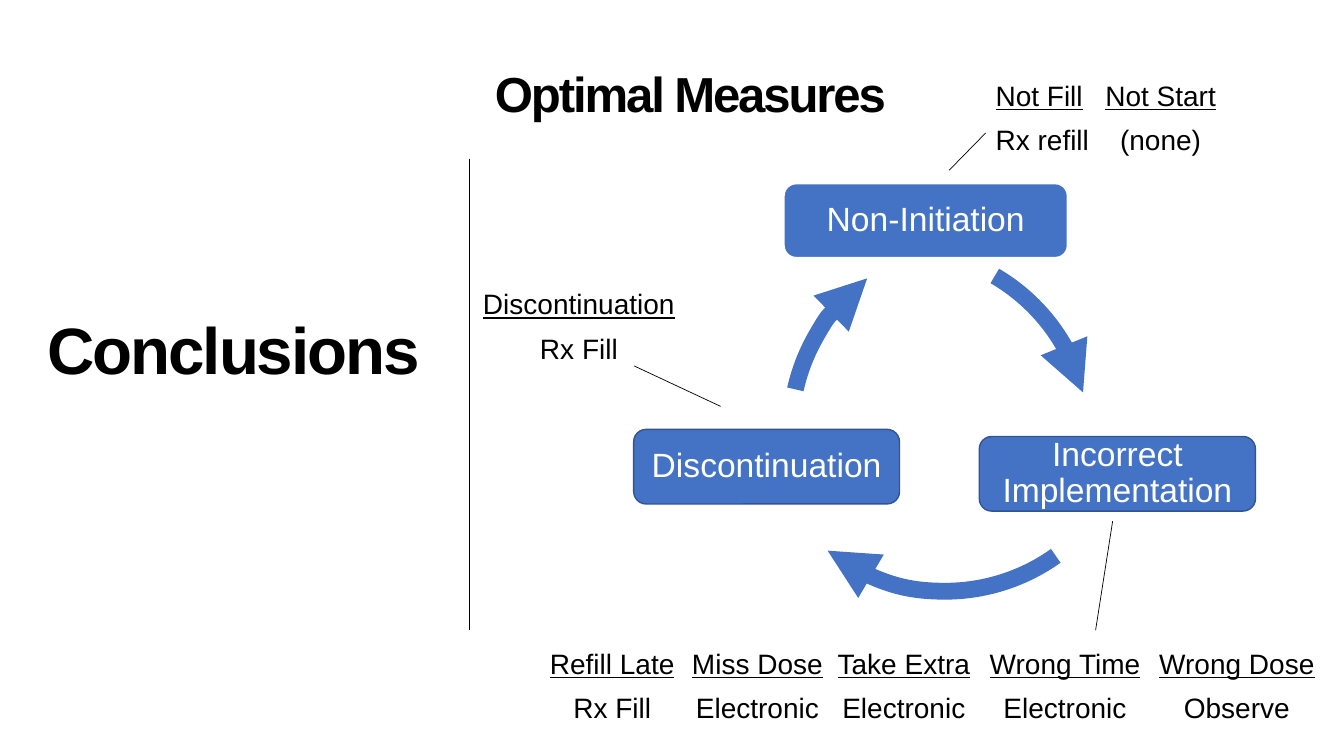
"""Build the conclusions slide: a cycle of three adherence phases and their best measures."""
from lxml import etree
from pptx import Presentation
from pptx.dml import color as dml
from pptx.enum import shapes, text
from pptx.oxml import ns
from pptx.util import Cm, Pt

COLORS = {"ink": "000000", "blue": "4472C4", "edge": "325491", "white": "FFFFFF"}
FONT = "Arial"

TITLE = ("Conclusions", (0.87, 7.06, 9.96, 3.68), 46.8)
HEADING = ("Optimal Measures", (11.28, 0.6, 11.3, 3.68), 35.1)

PHASES = [
    ("Non-Initiation", (19.75, 4.62, 7.16, 1.88), "white", 1.5),
    ("Incorrect Implementation", (24.68, 11.0, 6.96, 1.88), "edge", 1),
    ("Discontinuation", (15.97, 10.82, 6.7, 1.88), "edge", 1),
]
ARC_DIAMETER = 9.6
ARCS = [
    ((22.65, 11.1), 300.3, 345.4),
    ((23.82, 10.1), 54.5, 128.1),
    ((24.73, 10.86), 192.6, 233.2),
]

LEFT, CENTER = text.PP_ALIGN.LEFT, text.PP_ALIGN.CENTER
MEASURE_GROUPS = [
    (1.95, [
        ("Not Fill", "Rx refill", 26.34, 2.5, LEFT),
        ("Not Start", "(none)", 29.25, 3.1, CENTER),
    ]),
    (7.2, [("Discontinuation", "Rx Fill", 14.59, 5.1, CENTER)]),
    (16.26, [
        ("Refill Late", "Rx Fill", 15.43, 3.6, CENTER),
        ("Miss Dose", "Electronic", 19.09, 3.6, CENTER),
        ("Take Extra", "Electronic", 22.78, 3.6, CENTER),
        ("Wrong Time", "Electronic", 26.84, 4.1, CENTER),
        ("Wrong Dose", "Observe", 31.17, 4.1, CENTER),
    ]),
]
MEASURE_HEIGHT = 2.2

RULES = [
    ((11.84, 4.0), (11.84, 15.88)),
    ((15.98, 9.22), (18.16, 10.24)),
    ((23.92, 4.29), (24.84, 3.35)),
    ((27.61, 15.88), (28.04, 13.13)),
]


def rgb(name):
    return dml.RGBColor.from_string(COLORS[name])


def style_run(run, size, color="ink"):
    run.font.name, run.font.size = FONT, Pt(size)
    run.font.color.rgb = rgb(color)


def fill_heading(shape, wording, box, size):
    shape.left, shape.top, shape.width, shape.height = map(Cm, box)
    frame = shape.text_frame
    frame.text = wording
    frame.word_wrap = True
    frame.auto_size = text.MSO_AUTO_SIZE.NONE
    frame.vertical_anchor = text.MSO_ANCHOR.MIDDLE
    paragraph = frame.paragraphs[0]
    paragraph.alignment = text.PP_ALIGN.RIGHT
    paragraph.line_spacing, paragraph.space_before = 0.9, Pt(0)
    properties = paragraph._p.get_or_add_pPr()
    properties.set("marL", "0")
    properties.set("indent", "0")
    etree.SubElement(properties, ns.qn("a:buNone"))
    run = paragraph.runs[0]
    style_run(run, size)
    run.font.bold = True
    run._r.get_or_add_rPr().set("spc", "-150")


def add_measure(slide, top, behavior, measure, center, width, alignment):
    box = (center - width / 2, top, width, MEASURE_HEIGHT)
    frame = slide.shapes.add_textbox(*map(Cm, box)).text_frame
    frame.word_wrap = True
    frame.margin_left = frame.margin_right = 0
    frame.text = f"{behavior}\n{measure}"
    for row, paragraph in enumerate(frame.paragraphs):
        paragraph.alignment = alignment
        paragraph.line_spacing, paragraph.space_before = 0.9, Pt(10)
        run = paragraph.runs[0]
        style_run(run, 20)
        run.font.underline = row == 0


def add_phase(slide, label, box, edge, weight):
    shape = slide.shapes.add_shape(shapes.MSO_SHAPE.ROUNDED_RECTANGLE, *map(Cm, box))
    shape.shadow.inherit = False
    shape.fill.solid()
    shape.fill.fore_color.rgb = rgb("blue")
    shape.line.color.rgb, shape.line.width = rgb(edge), Pt(weight)
    frame = shape.text_frame
    frame.text = label
    frame.word_wrap = True
    frame.vertical_anchor = text.MSO_ANCHOR.MIDDLE
    paragraph = frame.paragraphs[0]
    paragraph.alignment, paragraph.line_spacing = CENTER, 0.9
    style_run(paragraph.runs[0], 24, "white")


def add_arc(slide, center, start, end):
    left, top = (value - ARC_DIAMETER / 2 for value in center)
    box = (left, top, ARC_DIAMETER, ARC_DIAMETER)
    arc = slide.shapes.add_shape(shapes.MSO_SHAPE.ARC, *map(Cm, box))
    arc.shadow.inherit = False
    arc.fill.background()
    for index, degrees in enumerate((start, end)):
        arc.adjustments[index] = degrees * 0.6
    arc.line.color.rgb, arc.line.width = rgb("blue"), Pt(12)
    etree.SubElement(arc.line._get_or_add_ln(), ns.qn("a:tailEnd"), type="triangle")


def add_rule(slide, start, end):
    rule = slide.shapes.add_connector(shapes.MSO_CONNECTOR.STRAIGHT, *map(Cm, start + end))
    rule.line.color.rgb, rule.line.width = rgb("ink"), Pt(0.5)
    etree.SubElement(rule._element.spPr, ns.qn("a:effectLst"))


def main():
    presentation = Presentation()
    presentation.slide_width, presentation.slide_height = Cm(33.87), Cm(19.05)
    slide = presentation.slides.add_slide(presentation.slide_layouts[1])
    fill_heading(slide.shapes.title, *TITLE)
    fill_heading(slide.placeholders[1], *HEADING)
    for phase in PHASES:
        add_phase(slide, *phase)
    for arc in ARCS:
        add_arc(slide, *arc)
    for rule in RULES:
        add_rule(slide, *rule)
    for top, measures in MEASURE_GROUPS:
        for measure in measures:
            add_measure(slide, top, *measure)
    presentation.save("out.pptx")


if __name__ == "__main__":
    main()
